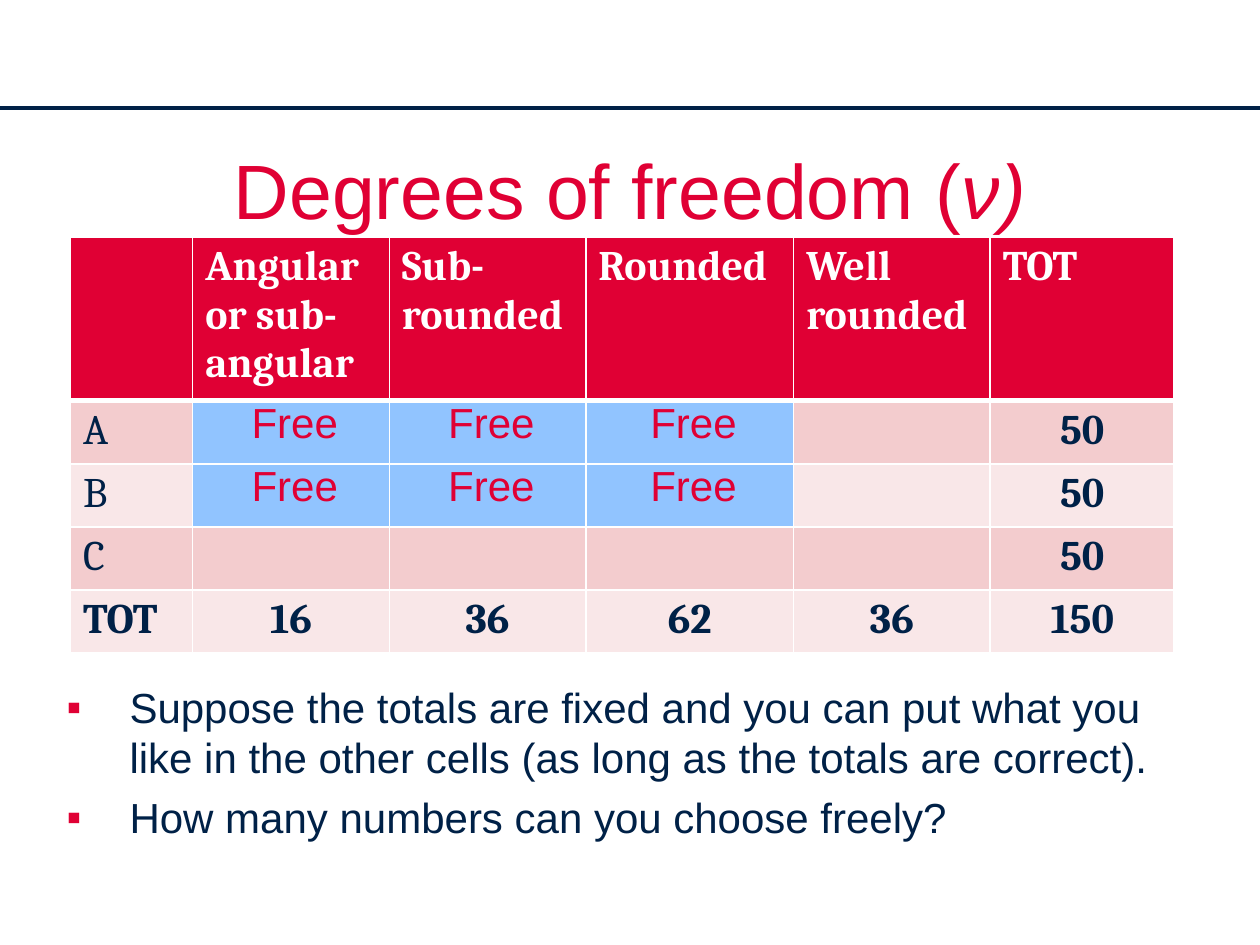
from dataclasses import dataclass

from pptx import Presentation
from pptx.dml.color import RGBColor as Color
from pptx.enum.shapes import MSO_CONNECTOR as Connector
from pptx.enum.text import MSO_ANCHOR as Anchor, PP_ALIGN as Align
from pptx.oxml import parse_xml
from pptx.oxml.ns import nsdecls, qn
from pptx.util import Inches, Pt


@dataclass(frozen=True)
class Theme:
    navy: str = "002147"
    red: str = "E00034"
    white: str = "FFFFFF"
    band_dark: str = "F3CCCE"
    band_light: str = "F9E7E8"
    free: str = "91C4FF"
    sans: str = "Arial"
    serif: str = "Cambria"
    title_size: float = 44
    body_size: float = 24
    bullet_gap: float = 5.5


THEME = Theme()
WIDTH, HEIGHT = 10, 7.5
COLUMNS = [0.97, 1.56, 1.56, 1.65, 1.56, 1.46]
ROWS = [1.24] + [0.485] * 4
HEADINGS = ["", "Angular or sub- angular", "Sub-rounded", "Rounded", "Well rounded", "TOT"]
COUNTS = [
    ["A", "Free", "Free", "Free", "", "50"],
    ["B", "Free", "Free", "Free", "", "50"],
    ["C", "", "", "", "", "50"],
    ["TOT", "16", "36", "62", "36", "150"],
]
QUESTIONS = [
    "Suppose the totals are fixed and you can put what you like in the other cells "
    "(as long as the totals are correct).",
    "How many numbers can you choose freely?",
]


def set_font(font, color, **values):
    for name, value in values.items():
        setattr(font, name, value)
    font.color.rgb = Color.from_string(color)


def add_rule(slide, left, top, width):
    rule = slide.shapes.add_connector(
        Connector.STRAIGHT, Inches(left), Inches(top), Inches(left + width), Inches(top))
    rule.line.color.rgb = Color.from_string(THEME.navy)
    rule.line.width = Pt(2.25)
    rule._element.spPr.append(parse_xml(f"<a:effectLst {nsdecls('a')}/>"))


def add_text_frame(slide, box, anchor):
    frame = slide.shapes.add_textbox(*map(Inches, box)).text_frame
    frame.word_wrap = True
    frame.vertical_anchor = anchor
    return frame


def add_title(slide, box):
    paragraph = add_text_frame(slide, box, Anchor.BOTTOM).paragraphs[0]
    paragraph.alignment = Align.CENTER
    for text, italic in (("Degrees of freedom (", False), ("ν)", True)):
        run = paragraph.add_run()
        run.text = text
        set_font(run.font, THEME.red, name=THEME.sans, size=Pt(THEME.title_size), italic=italic)


def add_bullet(paragraph):
    properties = paragraph._p.get_or_add_pPr()
    properties.set("marL", str(Inches(0.5)))
    properties.set("indent", str(Inches(-0.5)))
    for xml in (
        f'<a:buClr {nsdecls("a")}><a:srgbClr val="{THEME.red}"/></a:buClr>',
        f'<a:buFont {nsdecls("a")} typeface="{THEME.sans}"/>',
        f'<a:buChar {nsdecls("a")} char="▪"/>',
    ):
        properties.append(parse_xml(xml))


def add_questions(slide, box):
    frame = add_text_frame(slide, box, Anchor.TOP)
    for index, text in enumerate(QUESTIONS):
        paragraph = frame.add_paragraph() if index else frame.paragraphs[0]
        add_bullet(paragraph)
        if index:
            paragraph.space_before = Pt(THEME.bullet_gap)
        run = paragraph.add_run()
        run.text = text
        set_font(run.font, THEME.navy, name=THEME.sans, size=Pt(THEME.body_size))


def set_borders(cell, widths):
    """Draw white cell edges; widths maps the edge letters L, R, T, B to points."""
    properties = cell._tc.get_or_add_tcPr()
    for index, (edge, width) in enumerate(widths.items()):
        properties.insert(index, parse_xml(
            f'<a:ln{edge} {nsdecls("a")} w="{Pt(width)}"><a:solidFill>'
            f'<a:srgbClr val="{THEME.white}"/></a:solidFill></a:ln{edge}>'))


def cell_style(row, column, text):
    """Return fill, text colour, font name, bold and alignment of a cell."""
    if row == 0:
        return THEME.red, THEME.white, THEME.serif, True, Align.LEFT
    if text == "Free":
        return THEME.free, THEME.red, THEME.sans, False, Align.CENTER
    band = THEME.band_dark if row % 2 else THEME.band_light
    bold = column > 0 or row == len(COUNTS)
    return band, THEME.navy, THEME.serif, bold, Align.CENTER if column else Align.LEFT


def fill_cell(cell, row, column, text):
    fill, color, name, bold, alignment = cell_style(row, column, text)
    cell.fill.solid()
    cell.fill.fore_color.rgb = Color.from_string(fill)
    set_borders(cell, {"L": 1, "R": 1, "T": 3 if row == 1 else 1, "B": 3 if row == 0 else 1})
    if text == "Free":
        margins = {"left": 0.06, "right": 0, "top": 0, "bottom": 0}
        for side, margin in margins.items():
            setattr(cell, f"margin_{side}", Inches(margin))
    if text:
        paragraph = cell.text_frame.paragraphs[0]
        paragraph.alignment = alignment
        run = paragraph.add_run()
        run.text = text
        set_font(run.font, color, name=name, size=Pt(THEME.body_size), bold=bold)


def add_count_table(slide, left, top):
    rows = [HEADINGS] + COUNTS
    box = map(Inches, (left, top, sum(COLUMNS), sum(ROWS)))
    table = slide.shapes.add_table(len(rows), len(COLUMNS), *box).table
    for column, width in zip(table.columns, COLUMNS):
        column.width = Inches(width)
    for row, height in zip(table.rows, ROWS):
        row.height = Inches(height)
    for row, texts in enumerate(rows):
        for column, text in enumerate(texts):
            fill_cell(table.cell(row, column), row, column, text)


def main():
    presentation = Presentation()
    presentation.slide_width, presentation.slide_height = Inches(WIDTH), Inches(HEIGHT)
    slide = presentation.slides.add_slide(presentation.slide_layouts[6])
    add_rule(slide, 0, 0.86, WIDTH)
    add_title(slide, (0.5, 1.07, 0.9 * WIDTH, 0.84))
    add_questions(slide, (0.43, 5.36, 0.9 * WIDTH, 1.69))
    add_count_table(slide, 0.56, 1.88)
    presentation.save("out.pptx")


if __name__ == "__main__":
    main()
